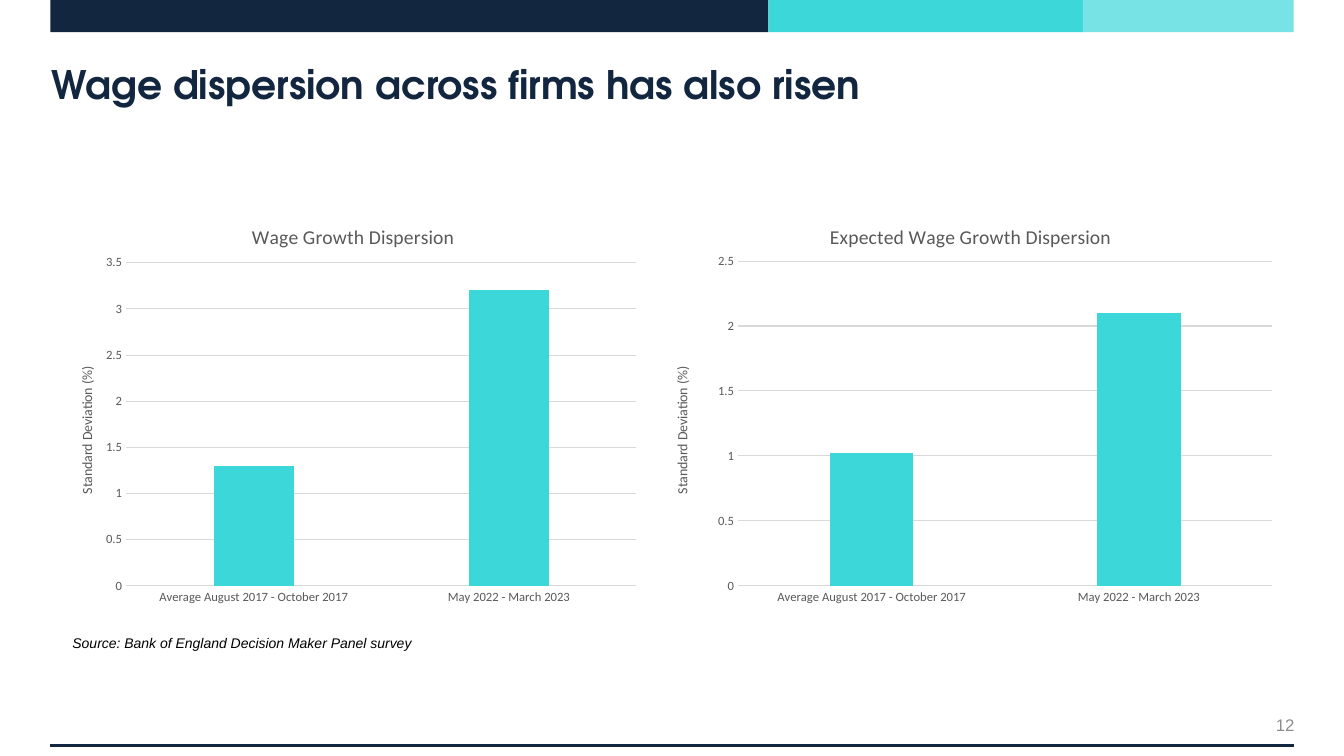
from dataclasses import dataclass

from lxml.etree import SubElement
from pptx import Presentation
from pptx.chart.data import CategoryChartData
from pptx.dml.color import RGBColor
from pptx.enum.chart import XL_CHART_TYPE, XL_TICK_MARK
from pptx.enum.shapes import MSO_CONNECTOR, MSO_SHAPE
from pptx.enum.text import MSO_ANCHOR, PP_ALIGN
from pptx.oxml import parse_xml
from pptx.oxml.ns import nsdecls, qn
from pptx.util import Inches, Pt


@dataclass(frozen=True)
class Theme:
    navy: str = "12273F"
    teal: str = "3CD7D9"
    pale: str = "77E3E4"
    black: str = "000000"
    label: str = "595959"
    grid: str = "D9D9D9"
    muted: str = "8C8C8C"
    head: str = "TeX Gyre Adventor"
    body: str = "Arial"
    plot: str = "Calibri"
    title: int = 28
    chart: int = 14
    page: int = 12
    note: int = 10
    tick: int = 9


THEME = Theme()
CATS = ["Average August 2017 - October 2017", "May 2022 - March 2023"]
# Frames in inches; layouts are fractions of the chart frame.
CHARTS = [
    dict(frame=(0.51, 1.97, 5.92, 4.11), title="Wage Growth Dispersion",
         vals=[1.3, 3.2], top=3.5, head=(0.33, 0.05), side=(0.04, 0.4),
         plot=(0.125, 0.155, 0.855, 0.78)),
    dict(frame=(6.43, 1.97, 6.31, 4.11), title="Expected Wage Growth Dispersion",
         vals=[1.02, 2.1], top=2.5, head=(0.28, 0.05), side=(0.035, 0.4),
         plot=(0.141, 0.151, 0.84, 0.784)),
]


def apply(item, **values):
    for name, value in values.items():
        setattr(item, name, value)


def style(font, face, size, color, **more):
    apply(font, name=face, size=Pt(size), **more)
    font.color.rgb = RGBColor.from_string(color)


def stroke(line, color, width):
    line.color.rgb = RGBColor.from_string(color)
    line.width = Pt(width)


def add_band(slide, left, width, color):
    band = slide.shapes.add_shape(MSO_SHAPE.RECTANGLE, Inches(left), 0,
                                  Inches(width), Inches(0.32))
    band.shadow.inherit = False
    band.fill.solid()
    band.fill.fore_color.rgb = RGBColor.from_string(color)
    band.line.fill.background()


def add_rule(slide, left, right, top):
    rule = slide.shapes.add_connector(MSO_CONNECTOR.STRAIGHT, Inches(left),
                                      Inches(top), Inches(right), Inches(top))
    stroke(rule.line, THEME.navy, 2.25)
    SubElement(rule.element.spPr, qn("a:effectLst"))


def add_text(slide, frame, text, font, align=PP_ALIGN.LEFT, **values):
    box = slide.shapes.add_textbox(*map(Inches, frame)).text_frame
    apply(box, **{"word_wrap": True, **values})
    para = box.paragraphs[0]
    para.alignment = align
    run = para.add_run()
    run.text = text
    style(run.font, **font)


def place(parent, index, spots, inner=False):
    """Give a chart part a fixed layout, as fractions of the chart frame."""
    for old in parent.findall(qn("c:layout")):
        parent.remove(old)
    names = ("x", "y", "w", "h")[:len(spots)]
    target = '<c:layoutTarget val="inner"/>' if inner else ""
    modes = "".join(f'<c:{n}Mode val="edge"/>' for n in names[:2])
    sizes = "".join(f'<c:{n} val="{v}"/>' for n, v in zip(names, spots))
    parent.insert(index, parse_xml(
        f'<c:layout {nsdecls("c")}><c:manualLayout>{target}{modes}{sizes}'
        '</c:manualLayout></c:layout>'))


def set_title(title, text, size, spot):
    title.text_frame.text = text
    font = title.text_frame.paragraphs[0].runs[0].font
    style(font, THEME.plot, size, THEME.label, bold=False)
    place(title.element, 1, spot)


def add_bars(slide, frame, title, vals, top, head, side, plot):
    data = CategoryChartData()
    data.categories = CATS
    data.add_series("Series 1", vals)
    chart = slide.shapes.add_chart(XL_CHART_TYPE.COLUMN_CLUSTERED,
                                   *map(Inches, frame), data).chart
    chart.has_legend = False
    style(chart.font, THEME.plot, THEME.note, THEME.black)
    set_title(chart.chart_title, title, THEME.chart, head)

    bars = chart.plots[0]
    apply(bars, gap_width=219, overlap=-27, vary_by_categories=False)
    fill = bars.series[0].format.fill
    fill.solid()
    fill.fore_color.rgb = RGBColor.from_string(THEME.teal)

    cat, val = chart.category_axis, chart.value_axis
    for axis in (cat, val):
        apply(axis, major_tick_mark=XL_TICK_MARK.NONE,
              minor_tick_mark=XL_TICK_MARK.NONE)
        style(axis.tick_labels.font, THEME.plot, THEME.tick, THEME.label)
    stroke(cat.format.line, THEME.grid, 0.75)
    apply(val, minimum_scale=0, maximum_scale=top, major_unit=0.5,
          has_major_gridlines=True)
    val.format.line.fill.background()
    stroke(val.major_gridlines.format.line, THEME.grid, 0.75)
    set_title(val.axis_title, "Standard Deviation (%)", THEME.note, side)
    turn = val.axis_title.text_frame._txBody.bodyPr
    turn.set("rot", "-5400000")
    turn.set("vert", "horz")
    place(chart.element.find(".//" + qn("c:plotArea")), 0, plot, inner=True)


def main():
    deck = Presentation()
    apply(deck, slide_width=Inches(13.33), slide_height=Inches(7.5))
    slide = deck.slides.add_slide(deck.slide_layouts[6])

    for band in ((0.5, 7.12, THEME.navy), (7.62, 3.13, THEME.teal),
                 (10.74, 2.09, THEME.pale)):
        add_band(slide, *band)
    add_rule(slide, 0.5, 12.83, 7.4)
    add_text(slide, (0.51, 0.33, 12.33, 1),
             "Wage dispersion across firms has also risen",
             dict(face=THEME.head, size=THEME.title, color=THEME.navy, bold=True),
             vertical_anchor=MSO_ANCHOR.MIDDLE, margin_left=0, margin_right=0,
             margin_top=0, margin_bottom=0)
    for chart in CHARTS:
        add_bars(slide, **chart)
    add_text(slide, (0.62, 6.25, 3.59, 0.27),
             "Source: Bank of England Decision Maker Panel survey",
             dict(face=THEME.body, size=THEME.note, color=THEME.black, italic=True),
             word_wrap=False)
    add_text(slide, (11.67, 6.98, 1.17, 0.42), "12",
             dict(face=THEME.body, size=THEME.page, color=THEME.muted),
             align=PP_ALIGN.RIGHT, vertical_anchor=MSO_ANCHOR.MIDDLE,
             margin_right=0)
    deck.save("out.pptx")


if __name__ == "__main__":
    main()
